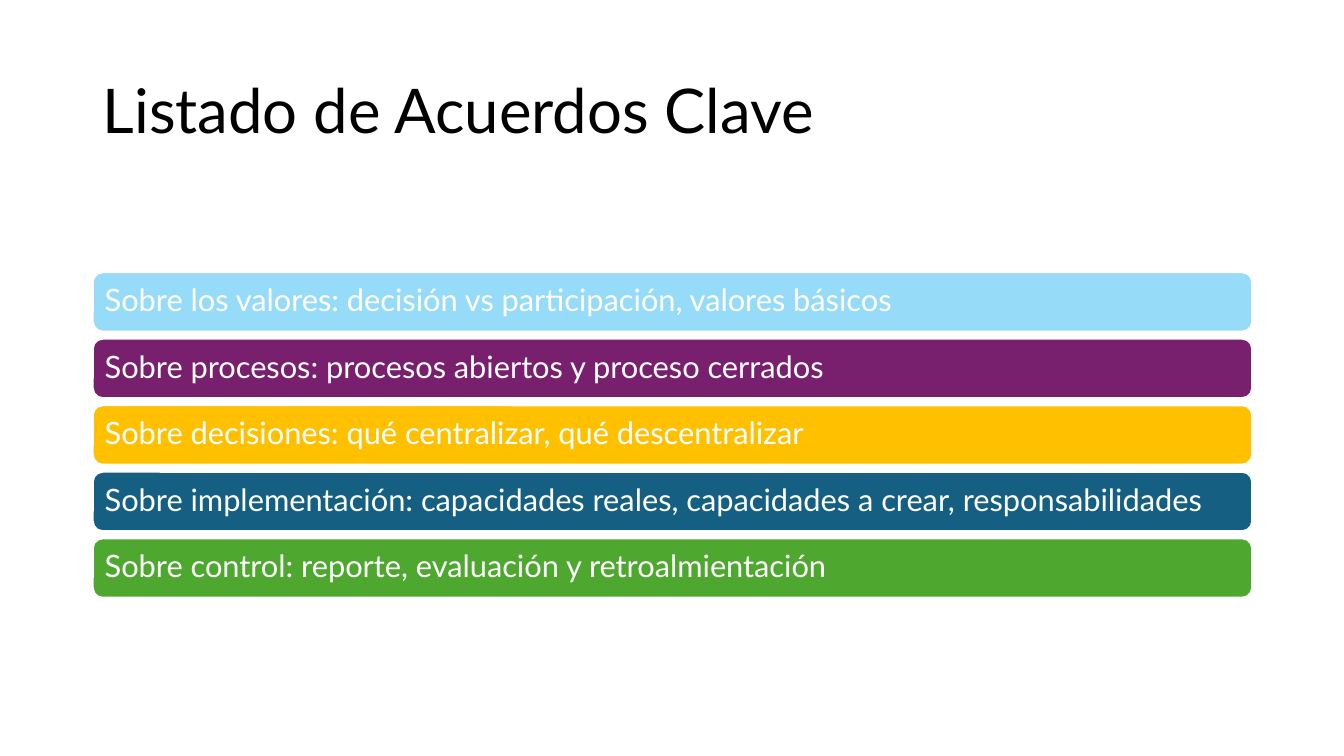
from pptx import Presentation
from pptx.dml.color import RGBColor
from pptx.enum.shapes import MSO_SHAPE
from pptx.enum.text import MSO_ANCHOR, PP_ALIGN
from pptx.util import Inches, Pt

FONT_NAME = "Lato"
BLACK = RGBColor(0x00, 0x00, 0x00)
WHITE = RGBColor(0xFF, 0xFF, 0xFF)
SKY = RGBColor(0x96, 0xDC, 0xF8)
PURPLE = RGBColor(0x78, 0x20, 0x6E)
AMBER = RGBColor(0xFF, 0xC0, 0x00)
TEAL = RGBColor(0x15, 0x60, 0x82)
GREEN = RGBColor(0x4E, 0xA7, 0x2E)

LEFT = 0.92
WIDTH = 11.5
FIRST_BAR_TOP = 2.7
BAR_HEIGHT = 0.59
BAR_STEP = 0.66

AGREEMENTS = [
    ("Sobre los valores: decisión vs participación, valores básicos", SKY),
    ("Sobre procesos: procesos abiertos y proceso cerrados", PURPLE),
    ("Sobre decisiones: qué centralizar, qué descentralizar", AMBER),
    ("Sobre implementación: capacidades reales, capacidades a crear, responsabilidades", TEAL),
    ("Sobre control: reporte, evaluación y retroalmientación", GREEN),
]


def write_text(shape, text, size, color):
    """Write one left-aligned, vertically centred paragraph in a shape."""
    frame = shape.text_frame
    frame.word_wrap = True
    frame.vertical_anchor = MSO_ANCHOR.MIDDLE
    paragraph = frame.paragraphs[0]
    paragraph.text = text
    paragraph.alignment = PP_ALIGN.LEFT
    paragraph.line_spacing = 0.9
    paragraph.font.name = FONT_NAME
    paragraph.font.size = Pt(size)
    paragraph.font.color.rgb = color


def add_title(slide, text):
    """Add the slide title."""
    title = slide.shapes.add_textbox(
        Inches(LEFT), Inches(0.4), Inches(WIDTH), Inches(1.45)
    )
    write_text(title, text, 44, BLACK)


def add_agreement_bar(slide, top, text, color):
    """Add one coloured rounded bar with its agreement."""
    bar = slide.shapes.add_shape(
        MSO_SHAPE.ROUNDED_RECTANGLE,
        Inches(LEFT), Inches(top), Inches(WIDTH), Inches(BAR_HEIGHT),
    )
    bar.shadow.inherit = False
    bar.fill.solid()
    bar.fill.fore_color.rgb = color
    bar.line.color.rgb = WHITE
    bar.line.width = Pt(1.5)
    frame = bar.text_frame
    frame.margin_left = frame.margin_right = Inches(0.09)
    frame.margin_top = frame.margin_bottom = Inches(0.09)
    write_text(bar, text, 22, WHITE)


def main():
    """Build and save the slide of key agreements."""
    presentation = Presentation()
    presentation.slide_width = Inches(13.33)
    presentation.slide_height = Inches(7.5)
    slide = presentation.slides.add_slide(presentation.slide_layouts[6])
    add_title(slide, "Listado de Acuerdos Clave")
    for index, (text, color) in enumerate(AGREEMENTS):
        add_agreement_bar(slide, FIRST_BAR_TOP + index * BAR_STEP, text, color)
    presentation.save("out.pptx")


if __name__ == "__main__":
    main()
